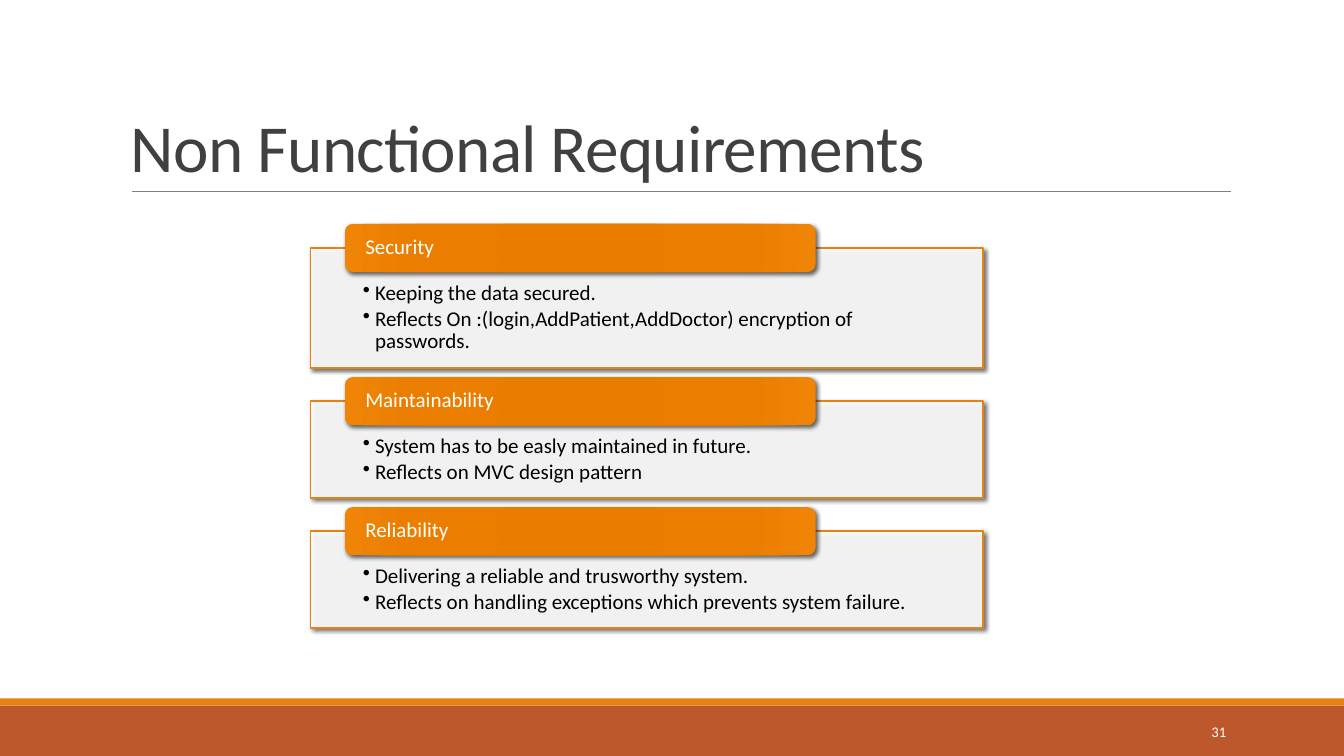
from lxml import etree
from pptx import Presentation
from pptx.dml.color import RGBColor
from pptx.enum.shapes import MSO_CONNECTOR as CONN, MSO_SHAPE as SHAPE
from pptx.enum.text import MSO_ANCHOR as ANCHOR, PP_ALIGN as ALIGN
from pptx.oxml import parse_xml
from pptx.oxml.ns import qn
from pptx.util import Inches, Pt

# Content
TITLE = "Non Functional Requirements"
PAGE = "31"
REQUIREMENTS = [  # heading, panel height, bullets
    ("Security", 1.19, [
        "Keeping the data secured.",
        "Reflects On :(login,AddPatient,AddDoctor) encryption of passwords."]),
    ("Maintainability", 0.96, [
        "System has to be easly maintained in future.",
        "Reflects on MVC design pattern"]),
    ("Reliability", 0.96, [
        "Delivering a reliable and trusworthy system.",
        "Reflects on handling exceptions which prevents system failure."]),
]

THEME = {
    "font": "Calibri", "title_size": 48, "body_size": 15, "page_size": 10.5,
    "title": "404040", "text": "000000", "white": "FFFFFF",
    "accent": "E48312", "footer": "BD582C", "rule": "808080",
    "tab_stops": [(0, "E57B00"), (34, "E87D00"), (70, "EB7E00"), (100, "EF8407")],
}

# Layout, in inches
SLIDE_W, SLIDE_H = 13.33, 7.5
PANEL_X, PANEL_Y, PANEL_W, PANEL_GAP = 3.08, 2.46, 6.67, 0.33
TAB_X, TAB_W, TAB_H = 3.42, 4.67, 0.48
HANG = 0.12
A_NS = 'xmlns:a="http://schemas.openxmlformats.org/drawingml/2006/main"'


def color(name):
    return RGBColor.from_string(THEME[name])


def write(s, lines, size, ink, anchor=ANCHOR.MIDDLE, align=ALIGN.LEFT,
          insets=(0.1, 0.05, 0.1, 0.05), line=1.0, after=0, bullet=False, spacing=None):
    tf = s.text_frame
    tf.word_wrap = True
    tf.vertical_anchor = anchor
    tf.margin_left, tf.margin_top, tf.margin_right, tf.margin_bottom = map(Inches, insets)
    for i, text in enumerate(lines):
        p = tf.paragraphs[0] if i == 0 else tf.add_paragraph()
        p.alignment, p.line_spacing, p.space_after = align, line, Pt(after)
        if bullet:
            pPr = p._p.get_or_add_pPr()
            pPr.set("marL", str(Inches(HANG)))
            pPr.set("indent", str(-Inches(HANG)))
            etree.SubElement(pPr, qn("a:buChar")).set("char", "•")
        r = p.add_run()
        r.text = text
        r.font.name, r.font.size = THEME["font"], Pt(THEME[size])
        r.font.color.rgb = color(ink)
        if spacing is not None:
            r._r.get_or_add_rPr().set("spc", str(spacing))


def add_box(slide, kind, x, y, w, h, fill, line=None):
    s = slide.shapes.add_shape(kind, *map(Inches, (x, y, w, h)))
    s.shadow.inherit = False
    s.fill.solid()
    s.fill.fore_color.rgb = color(fill)
    if line:
        s.line.color.rgb = color(line)
        s.line.width = Pt(1)
    else:
        s.line.fill.background()
    return s


def add_text(slide, x, y, w, h, text, **style):
    write(slide.shapes.add_textbox(*map(Inches, (x, y, w, h))), [text], **style)


def drop_shadow(s):
    s._element.spPr.find(qn("a:effectLst")).append(parse_xml(
        f'<a:outerShdw {A_NS} blurRad="{Pt(3)}" dist="{Pt(2)}" dir="2700000" '
        'rotWithShape="0"><a:srgbClr val="000000"><a:alpha val="60000"/>'
        '</a:srgbClr></a:outerShdw>'))


def radial_fill(s, stops):
    marks = "".join(f'<a:gs pos="{pos * 1000}"><a:srgbClr val="{rgb}"/></a:gs>'
                    for pos, rgb in stops)
    spPr = s._element.spPr
    spPr.replace(spPr.find(qn("a:solidFill")), parse_xml(
        f'<a:gradFill {A_NS} rotWithShape="1"><a:gsLst>{marks}</a:gsLst>'
        '<a:path path="circle"><a:fillToRect l="100000" t="100000" r="100000" '
        'b="100000"/></a:path></a:gradFill>'))


def add_requirement(slide, y, heading, height, bullets):
    panel = add_box(slide, SHAPE.RECTANGLE, PANEL_X, y, PANEL_W, height, "white", "accent")
    fill = panel._element.spPr.find(qn("a:solidFill"))
    etree.SubElement(fill[0], qn("a:alpha")).set("val", "90000")
    drop_shadow(panel)
    write(panel, bullets, "body_size", "text", anchor=ANCHOR.TOP,
          insets=(0.52, 0.34, 0.52, 0.12), line=0.9, after=2.25, bullet=True)

    tab = add_box(slide, SHAPE.ROUNDED_RECTANGLE, TAB_X, y - TAB_H / 2, TAB_W, TAB_H, "accent")
    radial_fill(tab, THEME["tab_stops"])
    drop_shadow(tab)
    write(tab, [heading], "body_size", "white", insets=(0.18, 0, 0.18, 0), line=0.9)


def main():
    prs = Presentation()
    prs.slide_width, prs.slide_height = Inches(SLIDE_W), Inches(SLIDE_H)
    slide = prs.slides.add_slide(prs.slide_layouts[6])

    # Footer bands
    add_box(slide, SHAPE.RECTANGLE, 0, 7, SLIDE_W, 0.5, "footer")
    add_box(slide, SHAPE.RECTANGLE, 0, 6.93, SLIDE_W, 0.07, "accent")

    # Title and rule
    rule = slide.shapes.add_connector(CONN.STRAIGHT, *map(Inches, (1.31, 1.9, 12.21, 1.9)))
    rule.line.color.rgb = color("rule")
    rule.line.width = Pt(0.5)
    etree.SubElement(rule._element.spPr, qn("a:effectLst"))
    add_text(slide, 1.2, 0.31, 11, 1.59, TITLE, size="title_size", ink="title",
             anchor=ANCHOR.BOTTOM, line=0.85, spacing=-50)

    # Requirement panels, stacked with equal gaps
    y = PANEL_Y
    for heading, height, bullets in REQUIREMENTS:
        add_requirement(slide, y, heading, height, bullets)
        y += height + PANEL_GAP

    # Page number
    add_text(slide, 10.83, 7.06, 1.43, 0.4, PAGE, size="page_size", ink="white",
             align=ALIGN.RIGHT)
    prs.save("out.pptx")


if __name__ == "__main__":
    main()
